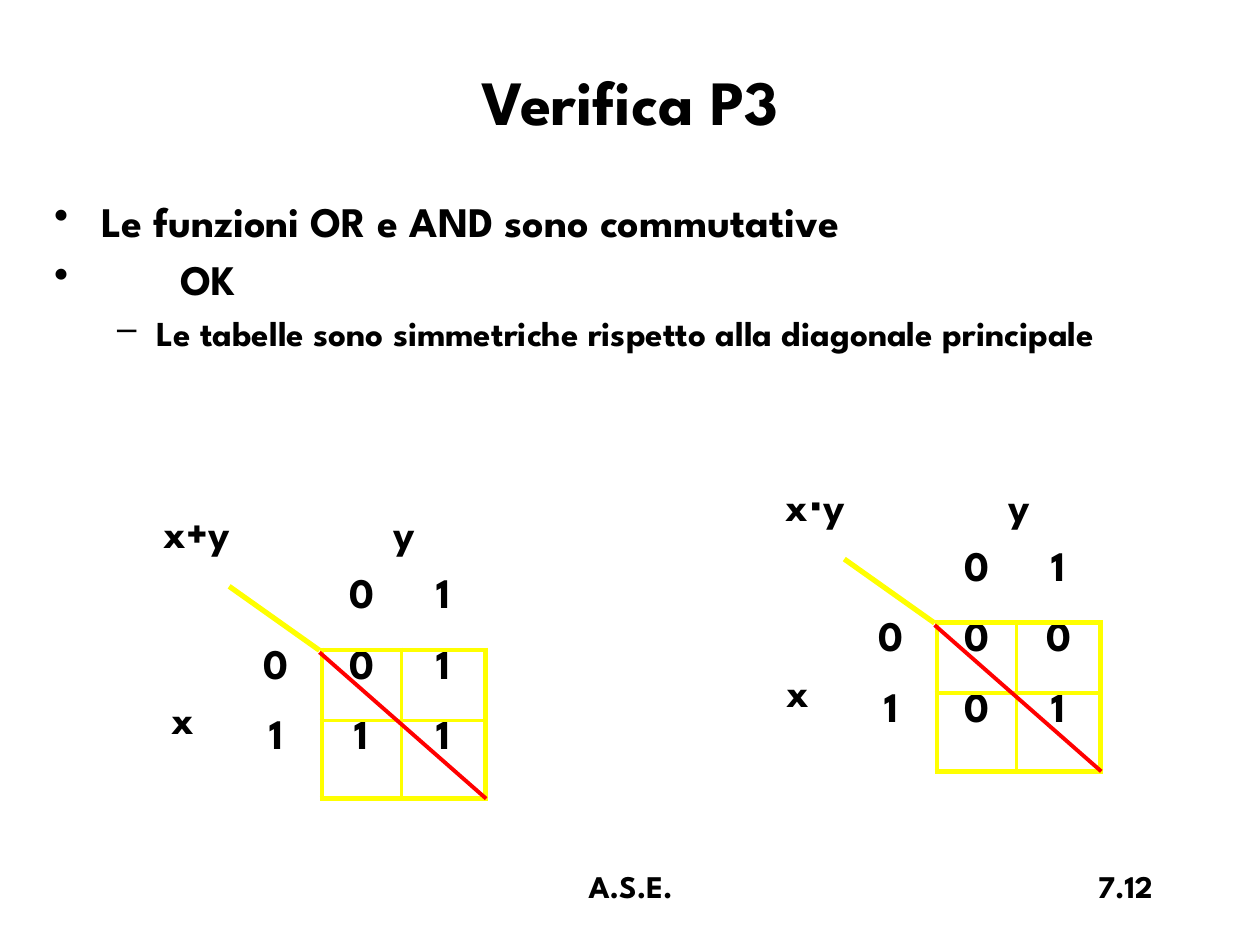
"""Builds a slide that checks the commutativity of OR and AND."""
from lxml.etree import SubElement
from pptx import Presentation
from pptx.dml.color import RGBColor
from pptx.enum.shapes import MSO_CONNECTOR
from pptx.enum.text import MSO_ANCHOR, PP_ALIGN
from pptx.oxml.ns import qn
from pptx.util import Cm, Pt

FONT = "League Spartan"
BLACK, YELLOW, RED = "000000", "FFFF00", "FF0000"
OUTER, INNER = 3, 2.25
COL_WIDTHS = (1.9, 1.85, 1.6, 1.7)
ROW_HEIGHTS = (1.22, 1.42, 1.42, 1.58)
NO_STYLE = "{2D5ABB26-0587-4C30-8999-92F81FD0307C}"


def rgb(value):
    """Return the colour for a hex string."""
    return RGBColor.from_string(value)


def add_run(p, text, size):
    """Add a bold run to a paragraph."""
    r = p.add_run()
    r.text = text
    r.font.name = FONT
    r.font.size = Pt(size)
    r.font.bold = True
    r.font.color.rgb = rgb(BLACK)


def add_box(s, left, top, width, height, anchor=MSO_ANCHOR.TOP):
    """Add a wrapping text box and return its text frame."""
    sp = s.shapes.add_textbox(Cm(left), Cm(top), Cm(width), Cm(height))
    tf = sp.text_frame
    tf.word_wrap = True
    tf.vertical_anchor = anchor
    return tf


def add_label(s, text, size, align, *place):
    """Add a text box holding a single line."""
    p = add_box(s, *place).paragraphs[0]
    p.alignment = align
    add_run(p, text, size)


def add_bullet(p, text, size, char, margin, hang, level=0):
    """Fill a paragraph as a bullet with a hanging indent."""
    p.level = level
    p.space_before = Pt(size * 0.2)
    pPr = p._p.get_or_add_pPr()
    pPr.set("marL", str(Cm(margin)))
    pPr.set("indent", str(-Cm(hang)))
    SubElement(pPr, qn("a:buChar"), char=char)
    add_run(p, text, size)


def add_line(s, start, end, color, width):
    """Add a straight line without shadow."""
    line = s.shapes.add_connector(
        MSO_CONNECTOR.STRAIGHT, *(Cm(v) for v in (*start, *end)))
    line.line.color.rgb = rgb(color)
    line.line.width = Pt(width)
    SubElement(line._element.spPr, qn("a:effectLst"))


def set_borders(cell, row, col):
    """Draw the yellow borders that touch the 2 by 2 value grid."""
    widths = {}
    if row >= 2 and col >= 2:
        widths = {"lnL": OUTER if col == 2 else INNER,
                  "lnR": OUTER if col == 3 else INNER,
                  "lnT": OUTER if row == 2 else INNER,
                  "lnB": OUTER if row == 3 else INNER}
    elif row >= 2 and col == 1:
        widths = {"lnR": OUTER}
    elif row == 1 and col >= 2:
        widths = {"lnB": OUTER}
    tcPr = cell._tc.get_or_add_tcPr()
    for side, width in widths.items():
        ln = SubElement(tcPr, qn(f"a:{side}"), w=str(Pt(width)))
        fill = SubElement(ln, qn("a:solidFill"))
        SubElement(fill, qn("a:srgbClr"), val=YELLOW)


def fill_cell(cell, text, row, col):
    """Set the text, margins, borders and fill of a cell."""
    cell.margin_left = cell.margin_right = 0
    cell.margin_top = cell.margin_bottom = 0
    set_borders(cell, row, col)
    cell.fill.background()
    p = cell.text_frame.paragraphs[0]
    if text:
        p.alignment = PP_ALIGN.RIGHT if row == col == 0 else PP_ALIGN.CENTER
        p.space_before = Pt(4.8)
        add_run(p, text, 24)


def add_truth_table(s, left, top, name, values):
    """Add a truth table with its corner line and main diagonal."""
    frame = s.shapes.add_table(4, 4, Cm(left), Cm(top),
                               Cm(sum(COL_WIDTHS)), Cm(sum(ROW_HEIGHTS)))
    table = frame.table
    table.first_row = table.horz_banding = False
    table._tbl.tblPr.find(qn("a:tableStyleId")).text = NO_STYLE
    for column, width in zip(table.columns, COL_WIDTHS):
        column.width = Cm(width)
    for row, height in zip(table.rows, ROW_HEIGHTS):
        row.height = Cm(height)
    rows = ((name, "", "y", ""), ("", "", "0", "1"),
            ("x", "0", *values[0]), ("", "1", *values[1]))
    for i, texts in enumerate(rows):
        for j, text in enumerate(texts):
            fill_cell(table.cell(i, j), text, i, j)
    table.cell(0, 2).merge(table.cell(0, 3))
    table.cell(2, 0).merge(table.cell(3, 0))
    table.cell(2, 0).vertical_anchor = MSO_ANCHOR.MIDDLE
    add_line(s, (left + 3.7, top + 2.65), (left + 1.88, top + 1.36),
             YELLOW, OUTER)
    add_line(s, (left + 3.7, top + 2.69), (left + 7.06, top + 5.64),
             RED, INNER)


def add_body(s):
    """Add the bulleted statements."""
    tf = add_box(s, 0.84, 3.81, 23.42, 13.13)
    bullets = (
        ("Le funzioni OR e AND sono commutative", 24, "•", 0.95, 0.95, 0),
        ("OK", 24, "•", 2.54, 2.54, 0),
        ("Le tabelle sono simmetriche rispetto alla diagonale principale",
         20, "–", 2.06, 0.79, 1),
    )
    for i, bullet in enumerate(bullets):
        add_bullet(tf.add_paragraph() if i else tf.paragraphs[0], *bullet)


def main():
    """Build and save the slide."""
    prs = Presentation()
    prs.slide_width, prs.slide_height = Cm(25.4), Cm(19.05)
    s = prs.slides.add_slide(prs.slide_layouts[6])
    add_label(s, "Verifica P3", 36, PP_ALIGN.CENTER,
              0.43, 0.43, 24.56, 3.18, MSO_ANCHOR.MIDDLE)
    add_body(s)
    add_truth_table(s, 15.14, 9.91, "x⋅y", ("00", "01"))
    add_truth_table(s, 2.74, 10.46, "x+y", ("01", "11"))
    add_label(s, "A.S.E.", 18, PP_ALIGN.CENTER, 8.69, 17.35, 8.05, 1.27)
    add_label(s, "7.12", 18, PP_ALIGN.RIGHT, 18.21, 17.35, 5.28, 1.27)
    prs.save("out.pptx")


if __name__ == "__main__":
    main()
